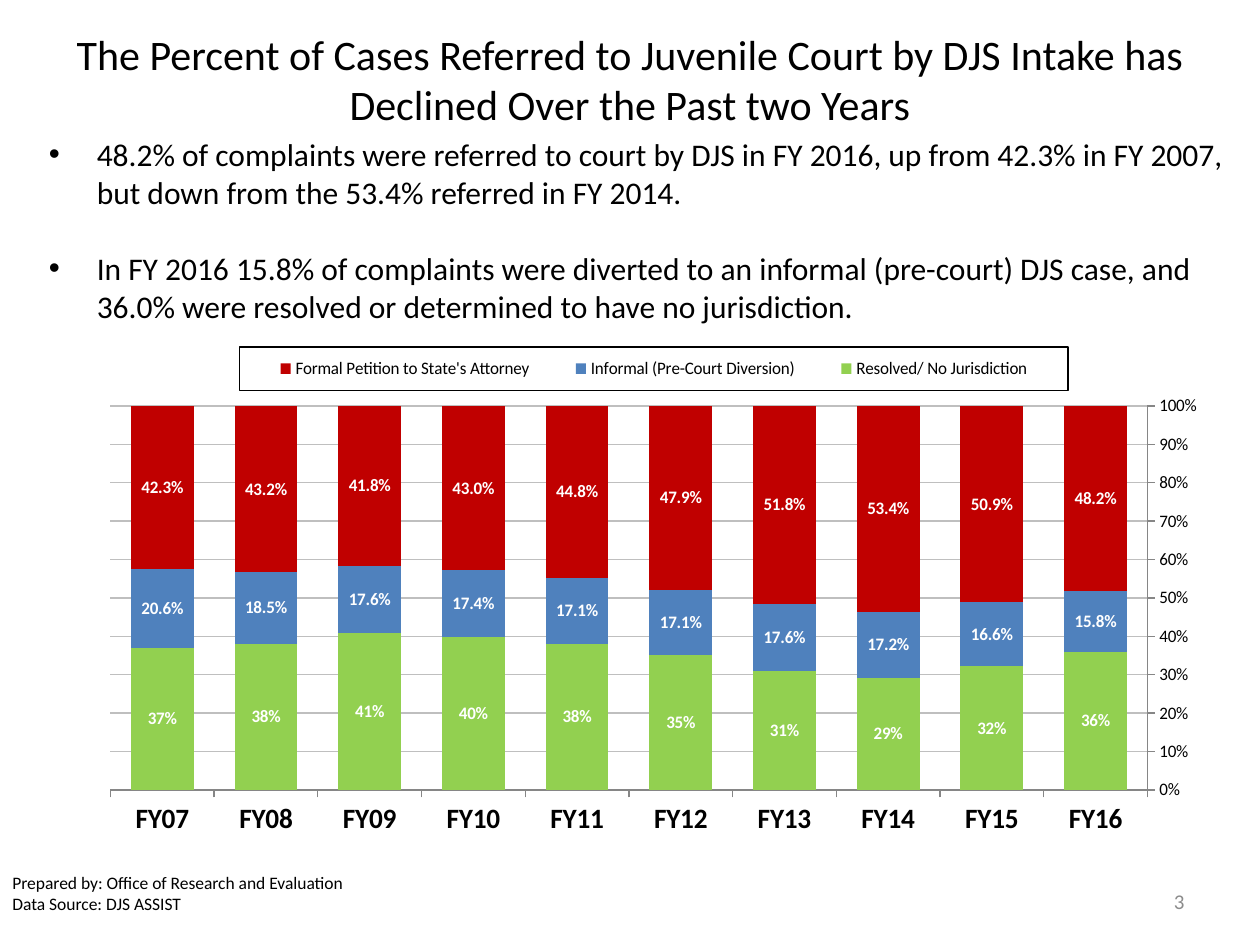
from pptx import Presentation
from pptx.chart.data import CategoryChartData
from pptx.dml.color import RGBColor
from pptx.enum.chart import (
    XL_AXIS_CROSSES as Crosses,
    XL_CHART_TYPE as ChartType,
    XL_LABEL_POSITION as LabelPosition,
    XL_LEGEND_POSITION as LegendPosition,
    XL_TICK_MARK as TickMark,
)
from pptx.enum.text import MSO_ANCHOR as Anchor, PP_ALIGN as Align
from pptx.oxml import parse_xml
from pptx.oxml.ns import nsdecls
from pptx.util import Inches, Pt

COLORS = {
    "text": "000000",
    "page_number": "8C8C8C",
    "label": "FFFFFF",
    "grid": "BFBFBF",
    "axis": "868686",
    "resolved": "92D050",
    "informal": "4F81BD",
    "formal": "C00000",
}

BULLETS = [
    "48.2% of complaints were referred to court by DJS in FY 2016, up from 42.3% in FY 2007, "
    "but down from the 53.4% referred in FY 2014.",
    "In FY 2016 15.8% of complaints were diverted to an informal (pre-court) DJS case, "
    "and 36.0% were resolved or determined to have no jurisdiction.",
]

YEARS = [f"FY{year:02d}" for year in range(16, 6, -1)]
OUTCOMES = [
    ("Resolved/ No Jurisdiction", "resolved", "0%",
     [0.36, 0.32, 0.29, 0.31, 0.35, 0.38, 0.4, 0.41, 0.38, 0.37]),
    ("Informal (Pre-Court Diversion)", "informal", "0.0%",
     [0.158, 0.166, 0.172, 0.176, 0.171, 0.171, 0.174, 0.176, 0.185, 0.206]),
    ("Formal Petition to State's Attorney", "formal", "0.0%",
     [0.482, 0.509, 0.534, 0.518, 0.479, 0.448, 0.43, 0.418, 0.432, 0.423]),
]


def color(name):
    return RGBColor.from_string(COLORS[name])


def layout(x, y, width, height, inner=False):
    target = '<c:layoutTarget val="inner"/>' if inner else ""
    sizes = "".join(
        f'<c:{tag} val="{value}"/>'
        for tag, value in zip("xywh", (x, y, width, height))
    )
    modes = '<c:xMode val="edge"/><c:yMode val="edge"/>'
    return parse_xml(
        f'<c:layout {nsdecls("c")}><c:manualLayout>{target}{modes}{sizes}'
        "</c:manualLayout></c:layout>"
    )


class SlideBuilder:
    font = "Calibri"

    def __init__(self, page):
        self.page = page

    def style(self, font, size, name="text", bold=False):
        font.name = self.font
        font.size = Pt(size)
        font.bold = bold
        font.color.rgb = color(name)

    def text(self, bounds, lines, size, name="text", align=Align.LEFT, bulleted=False):
        box = self.page.shapes.add_textbox(*map(Inches, bounds))
        frame = box.text_frame
        frame.word_wrap = True
        frame.vertical_anchor = Anchor.MIDDLE
        for index, line in enumerate(lines):
            para = frame.add_paragraph() if index else frame.paragraphs[0]
            para.alignment = align
            span = para.add_run()
            span.text = line
            self.style(span.font, size, name)
            if bulleted:
                if index:
                    para.space_before = Pt(22)
                self.bullet(para)

    def bullet(self, para):
        props = para._p.get_or_add_pPr()
        props.set("marL", str(Inches(0.38)))
        props.set("indent", str(-Inches(0.38)))
        props.append(parse_xml(f'<a:buFont {nsdecls("a")} typeface="Arial"/>'))
        props.append(parse_xml(f'<a:buChar {nsdecls("a")} char="•"/>'))

    def stacked_chart(self, bounds, categories, outcomes):
        data = CategoryChartData()
        data.categories = categories
        for title, _, number_format, values in outcomes:
            data.add_series(title, values, number_format)
        chart = self.page.shapes.add_chart(
            ChartType.COLUMN_STACKED_100, *map(Inches, bounds), data
        ).chart
        self.style(chart.font, 10)
        chart.has_title = False
        plot = chart.plots[0]
        plot.gap_width = 65
        plot.overlap = 100
        plot.vary_by_categories = False
        for series, (_, fill, number_format, _) in zip(plot.series, outcomes):
            self.series(series, fill, number_format)
        self.axes(chart)
        self.legend(chart)
        area = chart._chartSpace.chart.plotArea
        for old in area.findall(f"{{{area.nsmap['c']}}}layout"):
            area.remove(old)
        area.insert(0, layout(0.043, 0.154, 0.94, 0.731, inner=True))

    def series(self, series, fill, number_format):
        series.format.fill.solid()
        series.format.fill.fore_color.rgb = color(fill)
        labels = series.data_labels
        labels.show_value = True
        labels.position = LabelPosition.CENTER
        labels.number_format = number_format
        labels.number_format_is_linked = False
        self.style(labels.font, 10, "label", bold=True)

    def axes(self, chart):
        years, share = chart.category_axis, chart.value_axis
        years.reverse_order = True
        years.crosses = Crosses.MAXIMUM
        share.minimum_scale = 0
        share.maximum_scale = 1
        share.major_unit = 0.1
        share.tick_labels.number_format = "0%"
        share.tick_labels.number_format_is_linked = False
        share.has_major_gridlines = True
        grid = share.major_gridlines.format.line
        grid.color.rgb = color("grid")
        grid.width = Pt(0.75)
        for axis, size, bold in ((years, 16, True), (share, 10, False)):
            axis.major_tick_mark = TickMark.OUTSIDE
            axis.minor_tick_mark = TickMark.NONE
            axis.format.line.color.rgb = color("axis")
            axis.format.line.width = Pt(0.75)
            self.style(axis.tick_labels.font, size, bold=bold)

    def legend(self, chart):
        chart.has_legend = True
        legend = chart.legend
        legend.position = LegendPosition.RIGHT
        legend.include_in_layout = True
        self.style(legend.font, 10)
        element = legend._element
        for old in element.findall(f"{{{element.nsmap['c']}}}layout"):
            element.remove(old)
        overlay = element.find(f"{{{element.nsmap['c']}}}overlay")
        overlay.addprevious(layout(0.16, 0.042, 0.751, 0.082))
        overlay.addnext(parse_xml(
            f'<c:spPr {nsdecls("c", "a")}><a:ln w="{Pt(0.75)}"><a:solidFill>'
            f'<a:srgbClr val="{COLORS["text"]}"/></a:solidFill></a:ln></c:spPr>'
        ))


def main():
    deck = Presentation()
    deck.slide_width, deck.slide_height = Inches(10), Inches(7.5)
    builder = SlideBuilder(deck.slides.add_slide(deck.slide_layouts[6]))
    builder.text(
        (0, 0.34, 10, 0.57),
        ["The Percent of Cases Referred to Juvenile Court by DJS Intake has "
         "Declined Over the Past two Years"],
        24, align=Align.CENTER,
    )
    builder.text((0.29, 1.11, 9.67, 1.43), BULLETS, 18, bulleted=True)
    builder.text((7.17, 6.95, 2.33, 0.4), ["3"], 12, "page_number", Align.RIGHT)
    builder.text(
        (0, 6.83, 2.92, 0.52),
        ["Prepared by: Office of Research and Evaluation", "Data Source: DJS ASSIST"],
        10,
    )
    builder.stacked_chart((0.5, 2.58, 9, 4.17), YEARS, OUTCOMES)
    deck.save("out.pptx")


if __name__ == "__main__":
    main()
